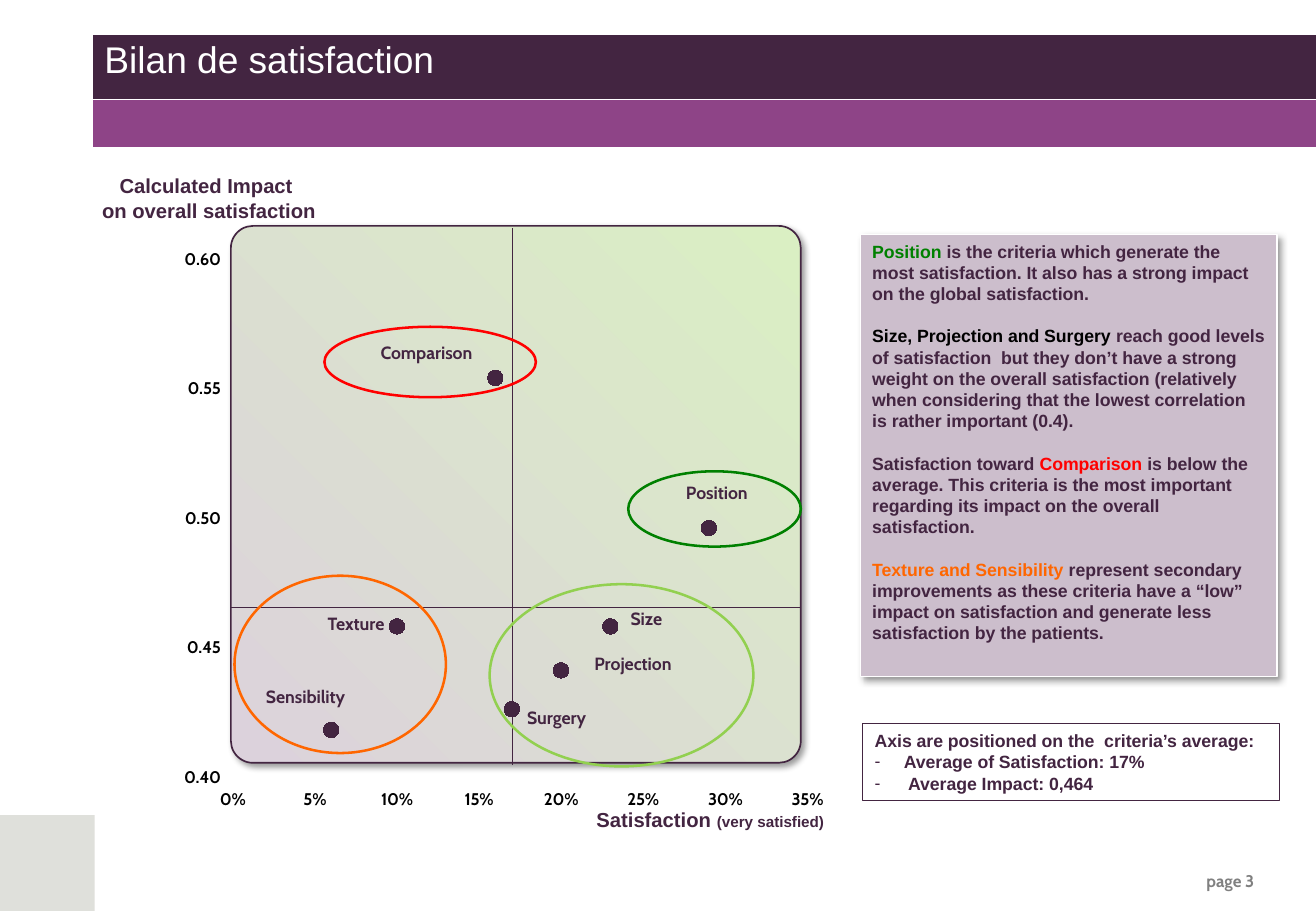
from lxml import etree
from pptx import Presentation
from pptx.chart.data import XyChartData
from pptx.dml.color import RGBColor
from pptx.enum.chart import XL_CHART_TYPE, XL_MARKER_STYLE, XL_TICK_MARK
from pptx.enum.shapes import MSO_CONNECTOR, MSO_SHAPE
from pptx.enum.text import MSO_ANCHOR, PP_ALIGN
from pptx.oxml import parse_xml
from pptx.oxml.ns import nsdecls, qn
from pptx.util import Inches, Pt

PLUM = RGBColor(0x43, 0x25, 0x41)
PURPLE = RGBColor(0x8E, 0x44, 0x87)
LILAC = RGBColor(0xCC, 0xBE, 0xCC)
PALE_LILAC = RGBColor(0xDC, 0xD2, 0xDC)
PALE_GREEN = RGBColor(0xDA, 0xEF, 0xC3)
LIME = RGBColor(0x92, 0xD0, 0x50)
GREEN = RGBColor(0x00, 0x80, 0x00)
ORANGE = RGBColor(0xFF, 0x66, 0x00)
RED = RGBColor(0xFF, 0x00, 0x00)
STONE = RGBColor(0xDF, 0xE0, 0xDB)
GREY = RGBColor(0x80, 0x80, 0x80)
BLACK = RGBColor(0x00, 0x00, 0x00)
WHITE = RGBColor(0xFF, 0xFF, 0xFF)

SHADOW = (
    f'<a:effectLst {nsdecls("a")}><a:outerShdw blurRad="50800" dist="38100" dir="2700000" '
    'algn="tl" rotWithShape="0"><a:srgbClr val="000000"><a:alpha val="40000"/></a:srgbClr>'
    '</a:outerShdw></a:effectLst>'
)

prs = Presentation()
prs.slide_width = Inches(10.83)
prs.slide_height = Inches(7.5)
slide = prs.slides.add_slide(prs.slide_layouts[6])


def add_box(kind, box, fill=None, line=None, weight=0.75):
    shape = slide.shapes.add_shape(kind, *map(Inches, box))
    shape.shadow.inherit = False
    if fill is None:
        shape.fill.background()
    else:
        shape.fill.solid()
        shape.fill.fore_color.rgb = fill
    if line is None:
        shape.line.fill.background()
    else:
        shape.line.color.rgb = line
        shape.line.width = Pt(weight)
    shape.text_frame.word_wrap = True
    shape.text_frame.vertical_anchor = MSO_ANCHOR.TOP
    return shape


def add_run(paragraph, text, size, color=PLUM, font="Arial", bold=True):
    run = paragraph.add_run()
    run.text = text
    run.font.size = Pt(size)
    run.font.name = font
    run.font.bold = bold
    run.font.color.rgb = color


add_box(MSO_SHAPE.RECTANGLE, (0, 6.71, 0.78, 0.79), STONE)

page_number = slide.shapes.add_textbox(Inches(9), Inches(7.12), Inches(1.42), Inches(0.27))
page_number.text_frame.word_wrap = True
page_number.text_frame.paragraphs[0].alignment = PP_ALIGN.RIGHT
add_run(page_number.text_frame.paragraphs[0], "page 3", 10, GREY, "Cabin")

title_band = slide.shapes.add_table(
    2, 1, Inches(0.76), Inches(0.28), Inches(10.08), Inches(0.9)).table
for row, (height, color) in enumerate([(0.54, PLUM), (0.36, PURPLE)]):
    title_band.rows[row].height = Inches(height)
    title_band.cell(row, 0).fill.solid()
    title_band.cell(row, 0).fill.fore_color.rgb = color
add_run(title_band.cell(0, 0).text_frame.paragraphs[0],
        "Bilan de satisfaction", 22, WHITE, bold=False)

impact_title = slide.shapes.add_textbox(Inches(0.73), Inches(1.38), Inches(1.98), Inches(0.5))
impact_title.text_frame.word_wrap = False
for row, text in enumerate(["Calculated Impact ", "on overall satisfaction"]):
    frame = impact_title.text_frame
    paragraph = frame.add_paragraph() if row else frame.paragraphs[0]
    paragraph.alignment = PP_ALIGN.CENTER
    add_run(paragraph, text, 12)

satisfaction_title = slide.shapes.add_textbox(Inches(4.81), Inches(6.6), Inches(2.09), Inches(0.3))
satisfaction_title.text_frame.word_wrap = False
add_run(satisfaction_title.text_frame.paragraphs[0], "Satisfaction ", 12)
add_run(satisfaction_title.text_frame.paragraphs[0], "(very satisfied)", 9)

FINDINGS = [
    [("Position ", GREEN),
     ("is the criteria which generate the most satisfaction. It also has a strong impact "
      "on the global satisfaction.", PLUM)],
    [("Size, Projection and Surgery ", BLACK),
     ("reach good levels of satisfaction  but they don’t have a strong weight on the overall "
      "satisfaction (relatively when considering that the lowest correlation is rather "
      "important (0.4).", PLUM)],
    [("Satisfaction toward ", PLUM), ("Comparison ", RED),
     ("is below the average. This criteria is the most important regarding its impact on the "
      "overall satisfaction.", PLUM)],
    [("Texture and Sensibility ", ORANGE),
     ("represent secondary improvements as these criteria have a “low” impact on satisfaction "
      "and generate less satisfaction by the patients.", PLUM)],
]
findings = add_box(MSO_SHAPE.RECTANGLE, (7.08, 1.93, 3.43, 3.64), LILAC, WHITE)
for row, parts in enumerate(FINDINGS):
    frame = findings.text_frame
    paragraph = frame.add_paragraph() if row else frame.paragraphs[0]
    paragraph.alignment = PP_ALIGN.LEFT
    paragraph.space_after = Pt(12.5)
    for text, color in parts:
        add_run(paragraph, text, 10.5, color)

averages = add_box(MSO_SHAPE.RECTANGLE, (7.1, 5.96, 3.43, 0.63), None, PLUM)
for row, text in enumerate(["Axis are positioned on the  criteria’s average:",
                            "Average of Satisfaction: 17%", " Average Impact: 0,464"]):
    frame = averages.text_frame
    paragraph = frame.add_paragraph() if row else frame.paragraphs[0]
    paragraph.alignment = PP_ALIGN.LEFT
    if row:
        properties = paragraph._p.get_or_add_pPr()
        properties.set("marL", str(Inches(0.24)))
        properties.set("indent", str(-Inches(0.24)))
        etree.SubElement(properties, qn("a:buFont")).set("typeface", "Arial")
        etree.SubElement(properties, qn("a:buChar")).set("char", "-")
    add_run(paragraph, text, 10.5)

quadrants = add_box(MSO_SHAPE.ROUNDED_RECTANGLE, (1.9, 1.86, 4.69, 4.42), None, PLUM, 1)
quadrants.adjustments[0] = 0.041
quadrants.fill.gradient()
quadrants.fill.gradient_angle = 45
for stop, color, position in zip(quadrants.fill.gradient_stops, (PALE_LILAC, PALE_GREEN), (0, 1)):
    stop.color.rgb = color
    stop.position = position

for shadowed in (findings, quadrants):
    properties = shadowed._element.spPr
    properties.replace(properties.find(qn("a:effectLst")), parse_xml(SHADOW))

for ends in [(4.22, 1.88, 4.22, 6.3), (1.9, 5, 6.59, 5)]:
    average_line = slide.shapes.add_connector(MSO_CONNECTOR.STRAIGHT, *map(Inches, ends))
    average_line.line.color.rgb = PLUM
    average_line.line.width = Pt(0.75)
    etree.SubElement(average_line._element.spPr, qn("a:effectLst"))

for box, color in [
    ((4.03, 4.81, 2.17, 1.5), LIME),
    ((1.93, 4.74, 1.74, 1.46), ORANGE),
    ((2.67, 2.69, 1.74, 0.58), RED),
    ((5.17, 3.88, 1.42, 0.62), GREEN),
]:
    add_box(MSO_SHAPE.OVAL, box, None, color, 1.5)

criteria = XyChartData()
scores = criteria.add_series("Series 1")
for satisfaction, impact in [(0.17, 0.426), (0.2, 0.441), (0.23, 0.458), (0.29, 0.496),
                             (0.1, 0.458), (0.06, 0.418), (0.16, 0.554)]:
    scores.add_data_point(satisfaction, impact)
chart = slide.shapes.add_chart(XL_CHART_TYPE.XY_SCATTER, Inches(1.42), Inches(1.94),
                               Inches(5.5), Inches(4.79), criteria).chart
chart.has_legend = False
chart.has_title = False
chart.font.name = "Cabin"
chart.font.size = Pt(10)
chart.font.bold = True
chart.font.color.rgb = BLACK
chart.plots[0].vary_by_categories = False
for axis, low, high, number_format in [(chart.category_axis, 0, 0.35, "0%"),
                                       (chart.value_axis, 0.4, 0.6, "0.00")]:
    axis.minimum_scale = low
    axis.maximum_scale = high
    axis.major_unit = 0.05
    axis.has_major_gridlines = False
    axis.major_tick_mark = XL_TICK_MARK.CROSS
    axis.tick_labels.number_format = number_format
    axis.tick_labels.number_format_is_linked = False
    axis.format.line.fill.background()
points = chart.plots[0].series[0]
points.smooth = False
points.format.line.fill.background()
points.marker.style = XL_MARKER_STYLE.CIRCLE
points.marker.size = 9
points.marker.format.fill.solid()
points.marker.format.fill.fore_color.rgb = PLUM
points.marker.format.line.color.rgb = PLUM

plot_area = chart._chartSpace.chart.plotArea
for old_layout in plot_area.findall(qn("c:layout")):
    plot_area.remove(old_layout)
plot_area.insert(0, parse_xml(
    f'<c:layout {nsdecls("c")}><c:manualLayout><c:layoutTarget val="inner"/>'
    '<c:xMode val="edge"/><c:yMode val="edge"/><c:x val="0.09"/><c:y val="0.04"/>'
    '<c:w val="0.86"/><c:h val="0.89"/></c:manualLayout></c:layout>'))

for text, left, top, width in [
    ("Sensibility", 2.03, 5.62, 0.97), ("Texture", 2.54, 5.02, 0.78),
    ("Comparison", 2.97, 2.79, 1.08), ("Surgery", 4.19, 5.79, 0.78),
    ("Projection", 4.73, 5.35, 0.96), ("Position", 5.5, 3.94, 0.8), ("Size", 5.07, 4.98, 0.5),
]:
    criterion = slide.shapes.add_textbox(Inches(left), Inches(top), Inches(width), Inches(0.26))
    criterion.text_frame.word_wrap = False
    paragraph = criterion.text_frame.paragraphs[0]
    paragraph.alignment = PP_ALIGN.CENTER
    paragraph.line_spacing = Pt(11)
    add_run(paragraph, text, 10.5, font="Cabin")

prs.save("out.pptx")
